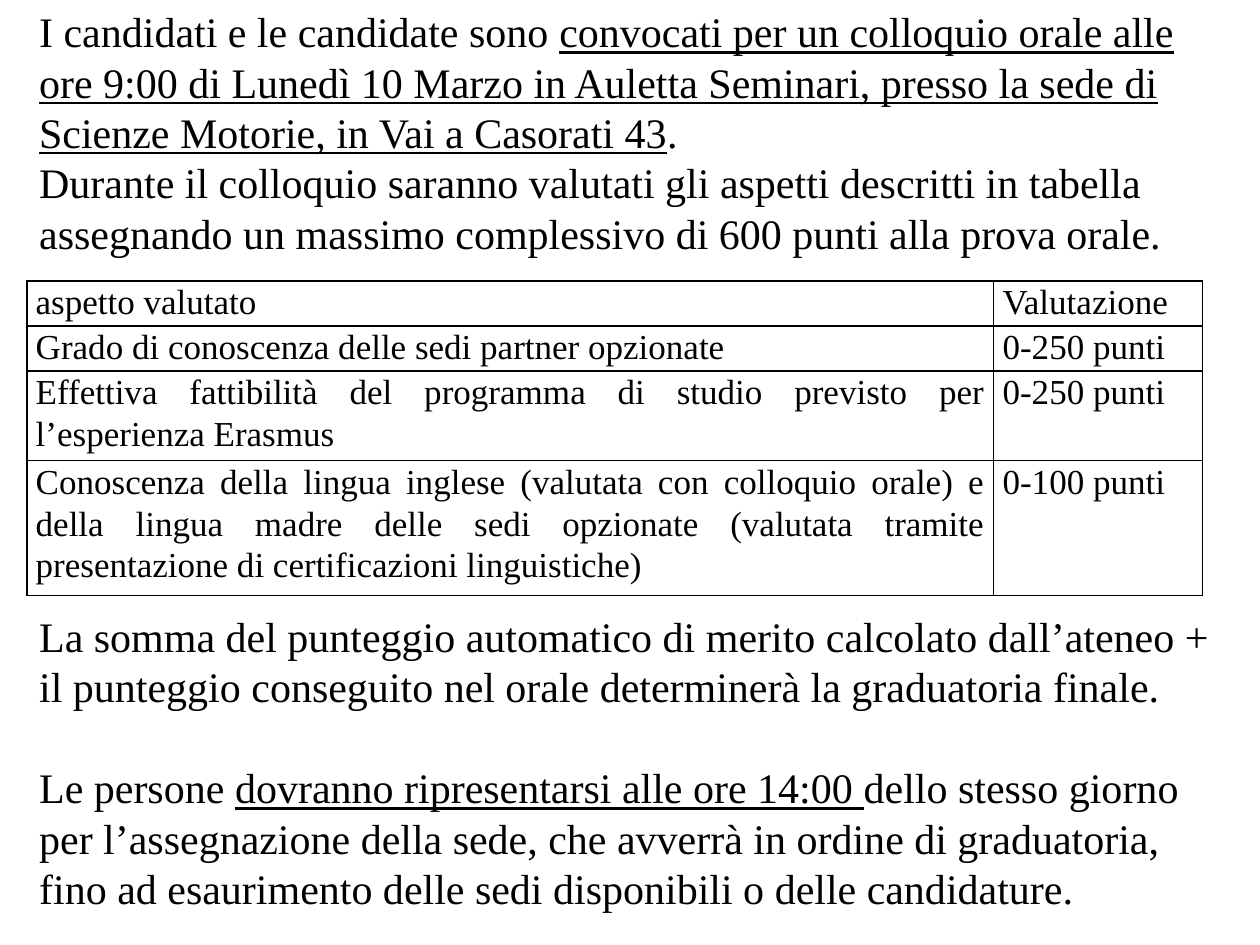
from dataclasses import dataclass

from lxml import etree
from pptx import Presentation
from pptx import util as u
from pptx.dml.color import RGBColor
from pptx.enum import text
from pptx.oxml import ns


@dataclass(frozen=True)
class Theme:
    """Colours, type sizes and spacings of the slide."""
    font: str = "Times New Roman"
    ink: str = "000000"
    body_size: float = 24
    body_line: float = 28.8
    table_size: float = 20
    table_spacing: float = 1.07
    border: float = 1


THEME = Theme()

NOTICE = [
    (0, [("I candidati e le candidate sono ", False),
         ("convocati per un colloquio orale alle ore 9:00 di Lunedì 10 Marzo in Auletta Seminari, "
          "presso la sede di Scienze Motorie, in Vai a Casorati 43", True),
         (".", False)]),
    (0, [("Durante il colloquio saranno valutati gli aspetti descritti in tabella assegnando "
          "un massimo complessivo di 600 punti alla prova orale.", False)]),
    (7, [("La somma del punteggio automatico di merito calcolato dall’ateneo + il punteggio "
          "conseguito nel orale determinerà la graduatoria finale.", False)]),
    (1, [("Le persone ", False),
         ("dovranno ripresentarsi alle ore 14:00 ", True),
         ("dello stesso giorno per l’assegnazione della sede, che avverrà in ordine di graduatoria, "
          "fino ad esaurimento delle sedi disponibili o delle candidature.", False)]),
]

CRITERIA = [
    (1, "aspetto valutato", "Valutazione"),
    (1, "Grado di conoscenza delle sedi partner opzionate", "0-250 punti"),
    (2, "Effettiva fattibilità del programma di studio previsto per l’esperienza Erasmus",
     "0-250 punti"),
    (3, "Conoscenza della lingua inglese (valutata con colloquio orale) e della lingua madre "
        "delle sedi opzionate (valutata tramite presentazione di certificazioni linguistiche)",
     "0-100 punti"),
]


def apply_format(target, values):
    """Set each attribute of the target from a dict."""
    for name, value in values.items():
        setattr(target, name, value)


def add_run(paragraph, wording, size, underline=False):
    """Append a run in the theme font."""
    run = paragraph.add_run()
    run.text = wording
    apply_format(run.font, {"name": THEME.font, "size": u.Pt(size), "underline": underline})
    run.font.color.rgb = RGBColor.from_string(THEME.ink)


def add_notice(slide, left, top, width, height):
    """Place the announcement paragraphs, leaving room for the table."""
    frame = slide.shapes.add_textbox(left, top, width, height).text_frame
    apply_format(frame, {"word_wrap": True, "vertical_anchor": text.MSO_ANCHOR.MIDDLE})
    for index, (lines_before, runs) in enumerate(NOTICE):
        paragraph = frame.add_paragraph() if index else frame.paragraphs[0]
        apply_format(paragraph, {"line_spacing": u.Pt(THEME.body_line),
                                 "space_before": u.Pt(lines_before * THEME.body_line)})
        for wording, underline in runs:
            add_run(paragraph, wording, THEME.body_size, underline)


def add_borders(cell):
    """Draw a solid line on the four sides of a cell."""
    properties = cell._tc.get_or_add_tcPr()
    for position, side in enumerate(("lnL", "lnR", "lnT", "lnB")):
        line = etree.Element(ns.qn(f"a:{side}"), w=str(u.Pt(THEME.border)))
        fill = etree.SubElement(line, ns.qn("a:solidFill"))
        etree.SubElement(fill, ns.qn("a:srgbClr"), val=THEME.ink)
        properties.insert(position, line)


def fill_cell(cell, wording):
    """Write justified text in a plain bordered cell."""
    cell.fill.background()
    apply_format(cell, {"margin_left": u.Cm(0.18), "margin_right": u.Cm(0.18),
                        "margin_top": 0, "margin_bottom": 0})
    paragraph = cell.text_frame.paragraphs[0]
    apply_format(paragraph, {"alignment": text.PP_ALIGN.JUSTIFY,
                             "line_spacing": THEME.table_spacing})
    add_run(paragraph, wording, THEME.table_size)
    add_borders(cell)


def add_criteria(slide, left, top, width, height):
    """Place the scoring table, with row heights by number of lines."""
    table = slide.shapes.add_table(len(CRITERIA), 2, left, top, width, height).table
    apply_format(table, {"first_row": False, "horz_banding": False})
    score_width = u.Cm(4.21)
    table.columns[0].width = width - score_width
    table.columns[1].width = score_width
    line_height = height // sum(lines for lines, *_ in CRITERIA)
    for row, (lines, *wordings) in zip(table.rows, CRITERIA):
        row.height = lines * line_height
        for cell, wording in zip(row.cells, wordings):
            fill_cell(cell, wording)


def main():
    """Build and save the slide."""
    presentation = Presentation()
    apply_format(presentation, {"slide_width": u.Cm(25.4), "slide_height": u.Cm(19.05)})
    slide = presentation.slides.add_slide(presentation.slide_layouts[6])
    add_notice(slide, u.Cm(0.54), u.Cm(-0.1), u.Cm(24.54), u.Cm(18.72))
    add_criteria(slide, u.Cm(0.54), u.Cm(5.66), u.Cm(23.7), u.Cm(6.35))
    presentation.save("out.pptx")


if __name__ == "__main__":
    main()
